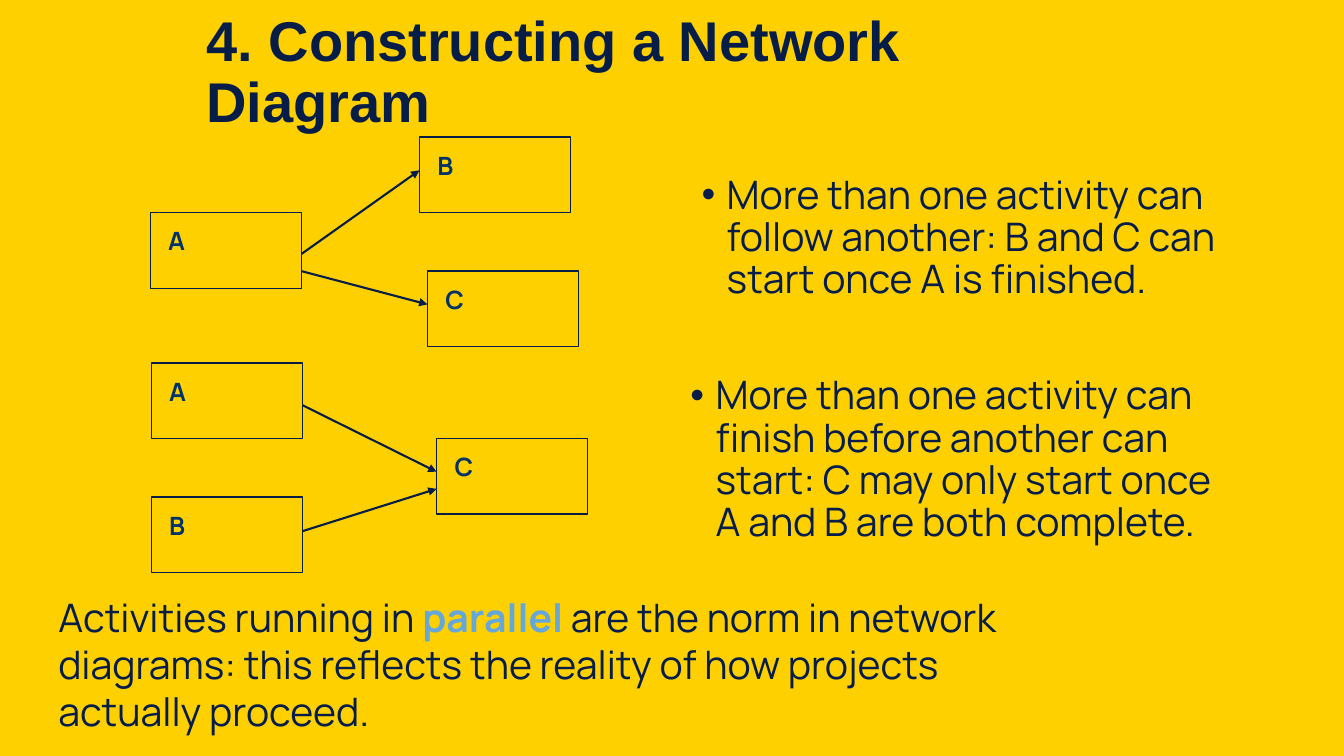
from lxml import etree
from pptx import Presentation
from pptx.dml.color import RGBColor
from pptx.enum.shapes import MSO_CONNECTOR, MSO_SHAPE
from pptx.enum.text import MSO_ANCHOR
from pptx.oxml.ns import qn
from pptx.util import Pt

PX = 9144
RECT = MSO_SHAPE.RECTANGLE
STRAIGHT = MSO_CONNECTOR.STRAIGHT
TOP, MIDDLE = MSO_ANCHOR.TOP, MSO_ANCHOR.MIDDLE

YELLOW = RGBColor(0xFF, 0xD0, 0x00)
NAVY = RGBColor(0x06, 0x1D, 0x48)
INK = RGBColor(0x07, 0x1D, 0x49)
BLUE = RGBColor(0x02, 0x33, 0x66)
SKY = RGBColor(0x66, 0xA7, 0xDB)

TITLE = dict(name="Arial", size=Pt(40), bold=True, color=NAVY)
BODY = dict(name="Manrope", size=Pt(28), bold=False, color=INK)
KEYWORD = dict(BODY, bold=True, color=SKY)
LABEL = dict(name="Manrope", size=Pt(18), bold=True, color=BLUE)

NODE_W, NODE_H = 150, 75
LABEL_W, LABEL_H, LABEL_GAP = 37, 40, 8
BULLET_INDENT = 25

FORK = dict(
    nodes={"A": (0, 75), "B": (267, 0), "C": (275, 133)},
    arrows=[(150, 116, 267, 33), (150, 133, 275, 166)],
)
JOIN = dict(
    nodes={"A": (0, 0), "B": (0, 133), "C": (283, 75)},
    arrows=[(150, 42, 283, 108), (150, 167, 283, 125)],
)


def px(*lengths):
    """Turn px lengths into EMU."""
    return [n * PX for n in lengths]


def add_text(slide, box, runs, anchor=TOP, wrap=True, spacing=None):
    """Place one paragraph of formatted runs in a text box and return it."""
    tf = slide.shapes.add_textbox(*px(*box)).text_frame
    tf.word_wrap = wrap
    tf.vertical_anchor = anchor
    p = tf.paragraphs[0]
    if spacing:
        p.line_spacing = spacing
    for text, style in runs:
        r = p.add_run()
        r.text = text
        for key, value in style.items():
            if key == "color":
                r.font.color.rgb = value
            else:
                setattr(r.font, key, value)
    return p


def add_bullet(slide, box, text):
    """Place a bulleted paragraph with a hanging indent."""
    p = add_text(slide, box, [(text, BODY)], spacing=0.9)
    pPr = p._p.get_or_add_pPr()
    indent = BULLET_INDENT * PX
    pPr.set("marL", str(indent))
    pPr.set("indent", str(-indent))
    etree.SubElement(pPr, qn("a:buFont"), typeface="Arial")
    etree.SubElement(pPr, qn("a:buChar"), char="•")


def add_node(slide, x, y, name):
    """Draw an outlined activity box with its letter at the top left."""
    s = slide.shapes.add_shape(RECT, *px(x, y, NODE_W, NODE_H))
    s.shadow.inherit = False
    s.fill.background()
    s.line.color.rgb = NAVY
    s.line.width = Pt(1)
    box = (x + LABEL_GAP, y + LABEL_GAP, LABEL_W, LABEL_H)
    add_text(slide, box, [(name, LABEL)], wrap=False)


def add_arrow(slide, x1, y1, x2, y2):
    """Draw a straight arrow between two points."""
    s = slide.shapes.add_connector(STRAIGHT, *px(x1, y1, x2, y2))
    s.line.color.rgb = NAVY
    s.line.width = Pt(1.5)
    etree.SubElement(s.line._get_or_add_ln(), qn("a:tailEnd"), type="triangle")
    etree.SubElement(s._element.spPr, qn("a:effectLst"))


def add_diagram(slide, x, y, nodes, arrows):
    """Draw a small network of activities from its top left corner."""
    for name, (dx, dy) in nodes.items():
        add_node(slide, x + dx, y + dy, name)
    for x1, y1, x2, y2 in arrows:
        add_arrow(slide, x + x1, y + y1, x + x2, y + y2)


def build_slide(prs):
    """Build the network diagram slide."""
    slide = prs.slides.add_slide(prs.slide_layouts[6])
    slide.background.fill.solid()
    slide.background.fill.fore_color.rgb = YELLOW
    add_text(slide, (195, 1, 856, 145),
             [("4. Constructing a Network Diagram", TITLE)],
             anchor=MIDDLE, spacing=0.9)
    add_bullet(slide, (686, 169, 567, 177),
               "More than one activity can follow another: "
               "B and C can start once A is finished.")
    add_bullet(slide, (675, 368, 567, 308),
               "More than one activity can finish before another can start: "
               "C may only start once A and B are both complete.")
    add_diagram(slide, 149, 136, **FORK)
    add_diagram(slide, 150, 360, **JOIN)
    add_text(slide, (48, 584, 995, 151), [
        ("Activities running in ", BODY),
        ("parallel ", KEYWORD),
        ("are the norm in network diagrams: this reflects the reality "
         "of how projects actually proceed.", BODY),
    ])


def main():
    """Create the presentation and save it."""
    prs = Presentation()
    prs.slide_width, prs.slide_height = px(1333, 750)
    build_slide(prs)
    prs.save("out.pptx")


if __name__ == "__main__":
    main()
